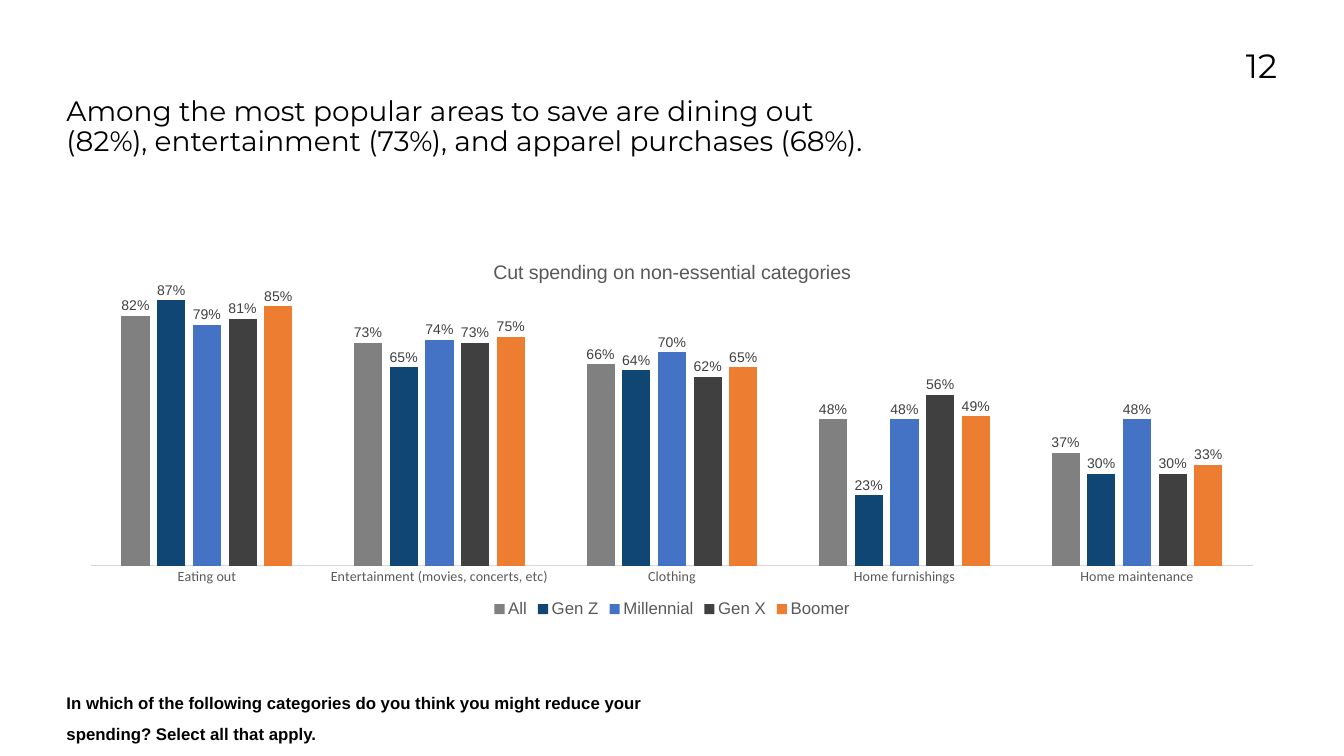
from dataclasses import dataclass

from pptx import Presentation
from pptx.chart.data import CategoryChartData
from pptx.dml.color import RGBColor
from pptx.enum.chart import (XL_CHART_TYPE, XL_LABEL_POSITION,
                             XL_LEGEND_POSITION, XL_TICK_MARK)
from pptx.enum.text import MSO_ANCHOR, MSO_AUTO_SIZE, PP_ALIGN
from pptx.oxml import parse_xml
from pptx.oxml.ns import nsdecls, qn
from pptx.util import Cm, Pt

COLUMN = XL_CHART_TYPE.COLUMN_CLUSTERED
OUTSIDE = XL_LABEL_POSITION.OUTSIDE_END
BOTTOM = XL_LEGEND_POSITION.BOTTOM
NO_TICK = XL_TICK_MARK.NONE
LEFT, RIGHT = PP_ALIGN.LEFT, PP_ALIGN.RIGHT
TOP = MSO_ANCHOR.TOP
NO_FIT = MSO_AUTO_SIZE.NONE

COLORS = {
    "black": "000000", "muted": "595959", "label": "404040", "rule": "D9D9D9",
    "gray": "808080", "navy": "104674", "blue": "4472C4", "dark": "404040",
    "orange": "ED7D31",
}
MARGIN = 3.35
GROUPS = ["Eating out", "Entertainment (movies, concerts, etc)", "Clothing",
          "Home furnishings", "Home maintenance"]


@dataclass
class Series:
    name: str
    color: str
    values: tuple[float, ...]


SERIES = [
    Series("All", "gray", (0.82, 0.73, 0.66, 0.48, 0.37)),
    Series("Gen Z", "navy", (0.87, 0.65, 0.64, 0.23, 0.30)),
    Series("Millennial", "blue", (0.79, 0.74, 0.70, 0.48, 0.48)),
    Series("Gen X", "dark", (0.81, 0.73, 0.62, 0.56, 0.30)),
    Series("Boomer", "orange", (0.85, 0.75, 0.65, 0.49, 0.33)),
]


def rgb(name: str) -> RGBColor:
    return RGBColor.from_string(COLORS[name])


def style(font, size: float, face: str, color: str, bold: bool = False) -> None:
    font.size, font.name, font.bold = Pt(size), face, bold
    font.color.rgb = rgb(color)


def write(shape, text: str, *, size: float, face: str, bold: bool = False,
          align=LEFT, spacing: float = 1.0) -> None:
    frame = shape.text_frame
    frame.margin_left = frame.margin_right = 0
    frame.margin_top = frame.margin_bottom = 0
    frame.word_wrap, frame.auto_size = True, NO_FIT
    frame.vertical_anchor = TOP
    para = frame.paragraphs[0]
    para.alignment, para.line_spacing = align, spacing
    run = para.add_run()
    run.text = text
    style(run.font, size, face, "black", bold)


def place_plot(chart, x: float, y: float, width: float, height: float) -> None:
    """Fix the inner plot area as fractions of the chart."""
    area = chart._chartSpace.chart.plotArea
    for old in area.findall(qn("c:layout")):
        area.remove(old)
    sizes = "".join(f'<c:{tag} val="{val}"/>' for tag, val in
                    zip("xywh", (x, y, width, height)))
    area.insert(0, parse_xml(
        f'<c:layout {nsdecls("c")}><c:manualLayout>'
        '<c:layoutTarget val="inner"/><c:xMode val="edge"/>'
        f'<c:yMode val="edge"/>{sizes}</c:manualLayout></c:layout>'))


def add_bars(slide, series: list[Series]) -> None:
    data = CategoryChartData(number_format="0%")
    data.categories = GROUPS
    for item in series:
        data.add_series(item.name, item.values)
    chart = slide.shapes.add_chart(
        COLUMN, Cm(MARGIN), Cm(12.4), Cm(61.04), Cm(18.95), data).chart
    style(chart.font, 10, "Calibri", "black")

    # Title and legend
    chart.has_title = True
    para = chart.chart_title.text_frame.paragraphs[0]
    run = para.add_run()
    run.text = "Cut spending on non-essential categories"
    style(run.font, 28, "Arial", "muted")
    chart.chart_title.include_in_layout = False
    chart.has_legend = True
    chart.legend.position = BOTTOM
    chart.legend.include_in_layout = False
    style(chart.legend.font, 24, "Arial", "muted")

    # Axes
    axis = chart.category_axis
    axis.major_tick_mark = axis.minor_tick_mark = NO_TICK
    style(axis.tick_labels.font, 20, "Calibri", "muted")
    axis.format.line.color.rgb = rgb("rule")
    axis.format.line.width = Pt(0.75)
    scale = chart.value_axis
    scale.minimum_scale, scale.maximum_scale = 0, 0.9
    scale.has_major_gridlines = False
    scale.visible = False

    # Bars and their labels
    plot = chart.plots[0]
    plot.gap_width, plot.overlap, plot.vary_by_categories = 219, -27, False
    for item, bars in zip(series, plot.series):
        bars.format.fill.solid()
        bars.format.fill.fore_color.rgb = rgb(item.color)
        bars.invert_if_negative = False
        labels = bars.data_labels
        labels.show_value, labels.position = True, OUTSIDE
        labels.number_format, labels.number_format_is_linked = "0%", False
        style(labels.font, 20, "Arial", "label")
    place_plot(chart, 0.02, 0.12, 0.96, 0.73)


def main() -> None:
    deck = Presentation()
    deck.slide_width, deck.slide_height = Cm(67.74), Cm(38.1)
    slide = deck.slides.add_slide(deck.slide_layouts[5])

    # Heading
    title = slide.shapes.title
    title.left, title.top = Cm(MARGIN), Cm(4.9)
    title.width, title.height = Cm(40.67), Cm(5.28)
    write(title, "Among the most popular areas to save are dining out (82%), "
          "entertainment (73%), and apparel purchases (68%).",
          size=40, face="Montserrat", spacing=0.9)

    # Page number
    page = slide.shapes.add_textbox(Cm(58.65), Cm(2.24), Cm(5.72), Cm(4.17))
    write(page, "12", size=48, face="Montserrat", align=RIGHT)

    add_bars(slide, SERIES)

    # Survey question
    note = slide.shapes.add_textbox(Cm(MARGIN), Cm(34.42), Cm(30.5), Cm(1.65))
    write(note, "In which of the following categories do you think you might "
          "reduce your spending? Select all that apply.",
          size=24, face="Arial", bold=True, spacing=1.5)

    deck.save("out.pptx")


if __name__ == "__main__":
    main()
